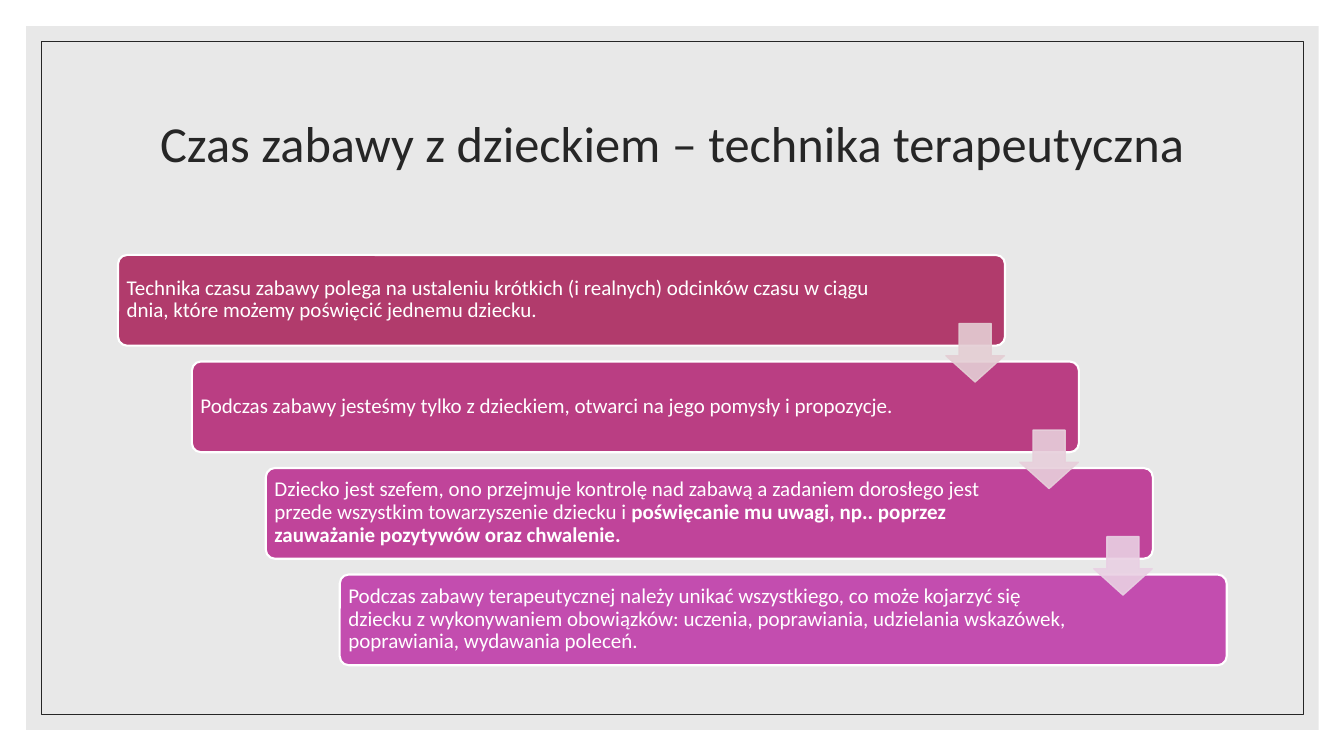
from pptx import Presentation
from pptx.dml.color import RGBColor
from pptx.enum.shapes import MSO_SHAPE as Shape
from pptx.enum.text import MSO_ANCHOR as Anchor, PP_ALIGN as Align
from pptx.oxml.ns import qn
from pptx.util import Inches, Pt
from lxml.etree import SubElement

WHITE = RGBColor(0xFF, 0xFF, 0xFF)
INK = RGBColor(0x26, 0x26, 0x26)
PANEL_GREY = RGBColor(0xD9, 0xD9, 0xD9)
STEP_FILLS = [RGBColor(0xB1, 0x3B, 0x6C), RGBColor(0xBA, 0x3E, 0x83),
              RGBColor(0xC0, 0x44, 0x9A), RGBColor(0xC3, 0x4D, 0xAF)]
ARROW_FILLS = [RGBColor(0xE4, 0xCE, 0xD4), RGBColor(0xE7, 0xCF, 0xDB),
               RGBColor(0xE9, 0xD0, 0xE3)]

TITLE = "Czas zabawy z dzieckiem – technika terapeutyczna"
# Each step is a list of runs: (text, bold)
STEPS = [
    [("Technika czasu zabawy polega na ustaleniu krótkich (i realnych) odcinków "
      "czasu w ciągu dnia, które możemy poświęcić jednemu dziecku.", False)],
    [("Podczas zabawy jesteśmy tylko z dzieckiem, otwarci na jego pomysły "
      "i propozycje.", False)],
    [("Dziecko jest szefem, ono przejmuje kontrolę nad zabawą a zadaniem dorosłego "
      "jest przede wszystkim towarzyszenie dziecku i ", False),
     ("poświęcanie mu uwagi, np.. poprzez zauważanie pozytywów oraz chwalenie.", True)],
    [("Podczas zabawy terapeutycznej należy unikać wszystkiego, co może kojarzyć się "
      "dziecku z wykonywaniem obowiązków: uczenia, poprawiania, udzielania wskazówek, "
      "poprawiania, wydawania poleceń.", False)],
]

# Staircase geometry, in percent of the slide's width and height
LEFT, TOP = 8.78, 33.73
STEP_X, STEP_Y = 5.5, 14.09
CARD_W, CARD_H = 66, 12
TEXT_DX, TEXT_DY, TEXT_H = 0.19, 0.33, 11.2
FIRST_TEXT_W, TEXT_W = 58.2, 55.75
ARROW_DX, ARROW_DY, ARROW_W, ARROW_H = 61.6, 9.07, 4.35, 7.73


class SlideBuilder:
    font = "Calibri"

    def __init__(self, deck):
        self.deck = deck
        self.slide = deck.slides.add_slide(deck.slide_layouts[6])
        background = self.slide.background.fill
        background.solid()
        background.fore_color.rgb = WHITE

    def area(self, left, top, width, height):
        """Turn shares of the slide, in percent, into lengths."""
        across, down = self.deck.slide_width / 100, self.deck.slide_height / 100
        return [int(length) for length in
                (left * across, top * down, width * across, height * down)]

    def paint(self, fill, color, opacity):
        fill.solid()
        fill.fore_color.rgb = color
        if opacity < 100:
            tint = fill._xPr.find(qn("a:solidFill"))[0]
            SubElement(tint, qn("a:alpha"), val=str(opacity * 1000))

    def shape(self, kind, area, fill=None, line=None, width=1, opacity=100, adjust=()):
        figure = self.slide.shapes.add_shape(kind, *self.area(*area))
        figure.shadow.inherit = False
        for index, value in enumerate(adjust):
            figure.adjustments[index] = value
        if fill is None:
            figure.fill.background()
        else:
            self.paint(figure.fill, fill, opacity)
        if line is None:
            figure.line.fill.background()
        else:
            figure.line.width = Pt(width)
            self.paint(figure.line.fill, line, opacity)

    def text(self, area, runs, size, color, align=Align.LEFT, inset=0.06):
        frame = self.slide.shapes.add_textbox(*self.area(*area)).text_frame
        frame_format = {"word_wrap": True, "vertical_anchor": Anchor.MIDDLE}
        for side in ("left", "right", "top", "bottom"):
            frame_format[f"margin_{side}"] = Inches(inset)
        for name, value in frame_format.items():
            setattr(frame, name, value)
        paragraph = frame.paragraphs[0]
        paragraph.alignment, paragraph.line_spacing = align, 0.9
        for words, bold in runs:
            run = paragraph.add_run()
            run.text = words
            for name, value in {"name": self.font, "size": Pt(size), "bold": bold}.items():
                setattr(run.font, name, value)
            run.font.color.rgb = color


def main():
    deck = Presentation()
    deck.slide_width, deck.slide_height = Inches(13.33), Inches(7.5)
    page = SlideBuilder(deck)

    # Panel, frame and title
    page.shape(Shape.RECTANGLE, (1.95, 3.47, 96.17, 93.07), PANEL_GREY, opacity=60)
    page.shape(Shape.RECTANGLE, (3.08, 5.47, 93.92, 89.07), line=INK, width=0.5)
    page.text((LEFT, 9.33, 82.5, 20), [(TITLE, False)], 36, INK, Align.CENTER)

    # Cards going down the stairs
    corners = [(LEFT + i * STEP_X, TOP + i * STEP_Y) for i in range(len(STEPS))]
    for i, ((x, y), runs, fill) in enumerate(zip(corners, STEPS, STEP_FILLS)):
        page.shape(Shape.ROUNDED_RECTANGLE, (x, y, CARD_W, CARD_H), fill,
                   WHITE, 1.5, adjust=[0.1])
        text_width = TEXT_W if i else FIRST_TEXT_W
        page.text((x + TEXT_DX, y + TEXT_DY, text_width, TEXT_H), runs, 15, WHITE)

    # Arrows from each card to the next
    for (x, y), fill in zip(corners, ARROW_FILLS):
        page.shape(Shape.DOWN_ARROW, (x + ARROW_DX, y + ARROW_DY, ARROW_W, ARROW_H),
                   fill, fill, opacity=90, adjust=[0.55, 0.45])

    deck.save("out.pptx")


if __name__ == "__main__":
    main()
